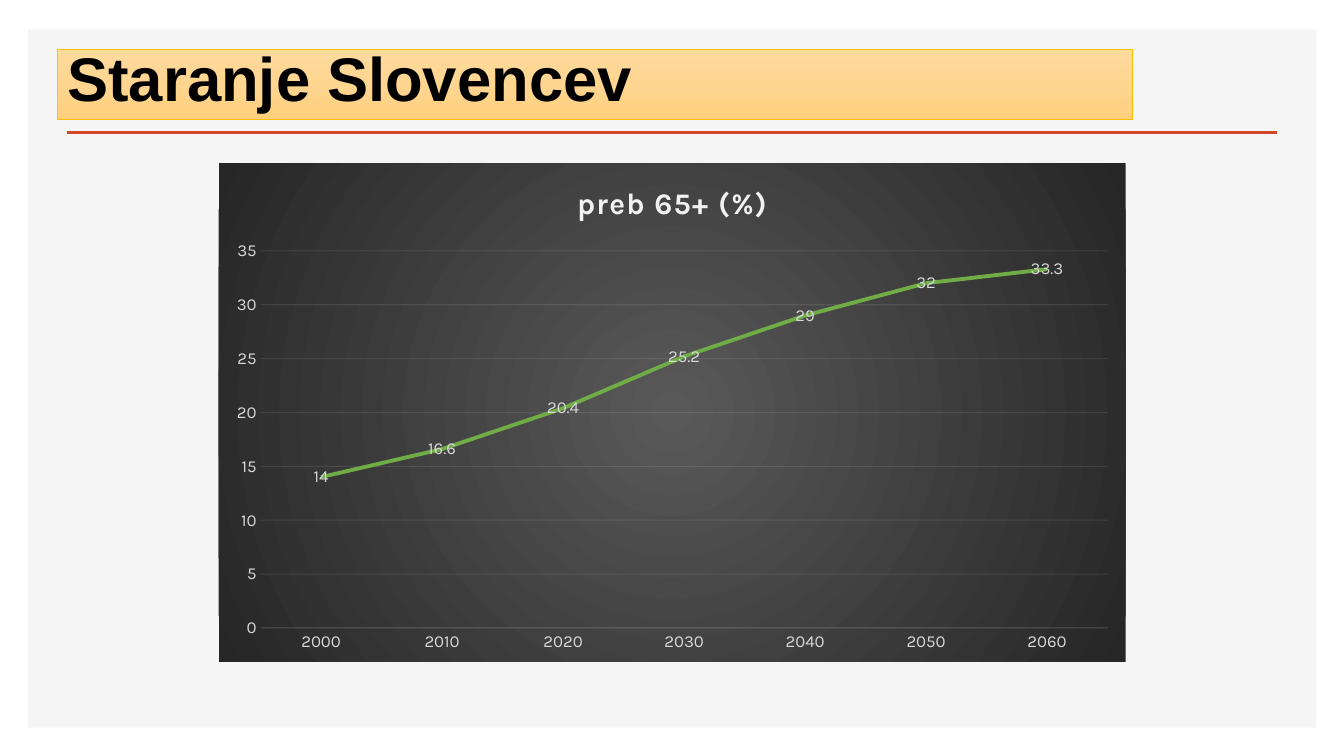
from dataclasses import dataclass

from lxml.etree import SubElement
from pptx import Presentation
from pptx.chart.data import CategoryChartData
from pptx.dml.color import RGBColor
from pptx.enum.chart import XL_CHART_TYPE as ChartType, XL_LABEL_POSITION as LabelPosition
from pptx.enum.chart import XL_TICK_MARK as TickMark
from pptx.enum.shapes import MSO_CONNECTOR as Connector, MSO_SHAPE as Shape
from pptx.enum.text import MSO_ANCHOR as Anchor, PP_ALIGN as Align
from pptx.oxml import parse_xml
from pptx.oxml.ns import nsdecls, qn
from pptx.util import Cm, Pt


@dataclass(frozen=True)
class Theme:
    panel: str = "F5F5F5"
    rule: str = "D24726"
    heading: str = "000000"
    heading_border: str = "FFC000"
    heading_stops: tuple = ((0, "FFDB9E"), (50, "FFD590"), (100, "FFD07C"))
    chart_stops: tuple = ((0, "595959"), (100, "262626"))
    chart_title: str = "F2F2F2"
    chart_text: str = "D9D9D9"
    grid: str = "F2F2F2"
    series: str = "70AD47"
    heading_font: str = "Arial"
    chart_font: str = "Karla"
    heading_size: float = 44
    chart_title_size: float = 21.3
    chart_size: float = 12


LINEAR = '<a:lin ang="5400000" scaled="0"/>'
RADIAL = '<a:path path="circle"><a:fillToRect l="50000" t="50000" r="50000" b="50000"/></a:path>'


def set_values(target, values):
    for name, value in values.items():
        setattr(target, name, value)


def set_font(font, name, size, color, bold=False):
    set_values(font, {"name": name, "size": Pt(size), "bold": bold})
    font.color.rgb = RGBColor.from_string(color)


def set_line(line, color, width, opacity=100):
    line.width = Pt(width)
    line.color.rgb = RGBColor.from_string(color)
    if opacity < 100:
        color_element = next(line._ln.iter(qn("a:srgbClr")))
        SubElement(color_element, qn("a:alpha"), val=str(opacity * 1000))


def gradient(stops, direction):
    stop_xml = "".join(
        f'<a:gs pos="{position * 1000}"><a:srgbClr val="{color}"/></a:gs>' for position, color in stops
    )
    return parse_xml(f'<a:gradFill {nsdecls("a")}><a:gsLst>{stop_xml}</a:gsLst>{direction}</a:gradFill>')


class SlideBuilder:
    def __init__(self, slide, theme):
        self.slide = slide
        self.theme = theme

    def rectangle(self, left, top, width, height):
        shape = self.slide.shapes.add_shape(Shape.RECTANGLE, Cm(left), Cm(top), Cm(width), Cm(height))
        shape.shadow.inherit = False
        return shape

    def panel(self, *box):
        shape = self.rectangle(*box)
        shape.fill.solid()
        shape.fill.fore_color.rgb = RGBColor.from_string(self.theme.panel)
        shape.line.fill.background()

    def rule(self, left, right, top):
        connector = self.slide.shapes.add_connector(Connector.STRAIGHT, Cm(left), Cm(top), Cm(right), Cm(top))
        set_line(connector.line, self.theme.rule, 2)
        SubElement(connector._element.spPr, qn("a:effectLst"))

    def heading(self, text, *box):
        theme = self.theme
        shape = self.rectangle(*box)
        shape._element.spPr.find(qn("a:prstGeom")).addnext(gradient(theme.heading_stops, LINEAR))
        set_line(shape.line, theme.heading_border, 0.5)
        set_values(shape.text_frame, {"vertical_anchor": Anchor.BOTTOM, "word_wrap": True})
        paragraph = shape.text_frame.paragraphs[0]
        set_values(paragraph, {"alignment": Align.LEFT, "line_spacing": 0.9})
        run = paragraph.add_run()
        run.text = text
        set_font(run.font, theme.heading_font, theme.heading_size, theme.heading, True)

    def line_chart(self, title, values_by_year, left, top, width, height):
        theme = self.theme
        data = CategoryChartData()
        data.categories = [str(year) for year in values_by_year]
        data.add_series(title, values_by_year.values())
        chart = self.slide.shapes.add_chart(
            ChartType.LINE, Cm(left), Cm(top), Cm(width), Cm(height), data
        ).chart
        set_values(chart, {"has_legend": False, "has_title": True})
        set_font(chart.font, theme.chart_font, theme.chart_size, theme.chart_text)
        self.chart_background(chart)

        run = chart.chart_title.text_frame.paragraphs[0].add_run()
        run.text = title
        set_font(run.font, theme.chart_font, theme.chart_title_size, theme.chart_title, True)
        run.font._element.set("spc", "100")

        for axis in (chart.category_axis, chart.value_axis):
            set_values(axis, {"major_tick_mark": TickMark.NONE, "minor_tick_mark": TickMark.NONE})
            set_font(axis.tick_labels.font, theme.chart_font, theme.chart_size, theme.chart_text)
        value_axis = chart.value_axis
        set_values(value_axis, {"minimum_scale": 0, "maximum_scale": 35, "major_unit": 5})
        value_axis.format.line.fill.background()
        for line in (chart.category_axis.format.line, value_axis.major_gridlines.format.line):
            set_line(line, theme.grid, 0.75, 10)

        plot = chart.plots[0]
        plot.vary_by_categories = False
        series = plot.series[0]
        series.smooth = False
        set_line(series.format.line, theme.series, 2.75)
        labels = series.data_labels
        set_values(labels, {"show_value": True, "position": LabelPosition.CENTER})
        set_font(labels.font, theme.chart_font, theme.chart_size, theme.chart_text)

    def chart_background(self, chart):
        chart_space = chart._chartSpace
        properties = parse_xml(f'<c:spPr {nsdecls("c", "a")}><a:ln><a:noFill/></a:ln></c:spPr>')
        properties.insert(0, gradient(self.theme.chart_stops, RADIAL))
        chart_space.find(qn("c:chart")).addnext(properties)
        corners = parse_xml(f'<c:roundedCorners {nsdecls("c")} val="0"/>')
        chart_space.find(qn("c:date1904")).addnext(corners)


def main():
    presentation = Presentation()
    set_values(presentation, {"slide_width": Cm(33.87), "slide_height": Cm(19.05)})
    slide = presentation.slides.add_slide(presentation.slide_layouts[6])
    builder = SlideBuilder(slide, Theme())
    builder.panel(0.71, 0.74, 32.46, 17.6)
    builder.rule(1.68, 32.18, 3.33)
    shares = (14, 16.6, 20.4, 25.2, 29, 32, 33.3)
    share_by_year = dict(zip(range(2000, 2061, 10), shares))
    builder.line_chart("preb 65+ (%)", share_by_year, 5.51, 4.11, 22.86, 12.57)
    builder.heading("Staranje Slovencev", 1.45, 1.24, 27.08, 1.78)
    presentation.save("out.pptx")


if __name__ == "__main__":
    main()
